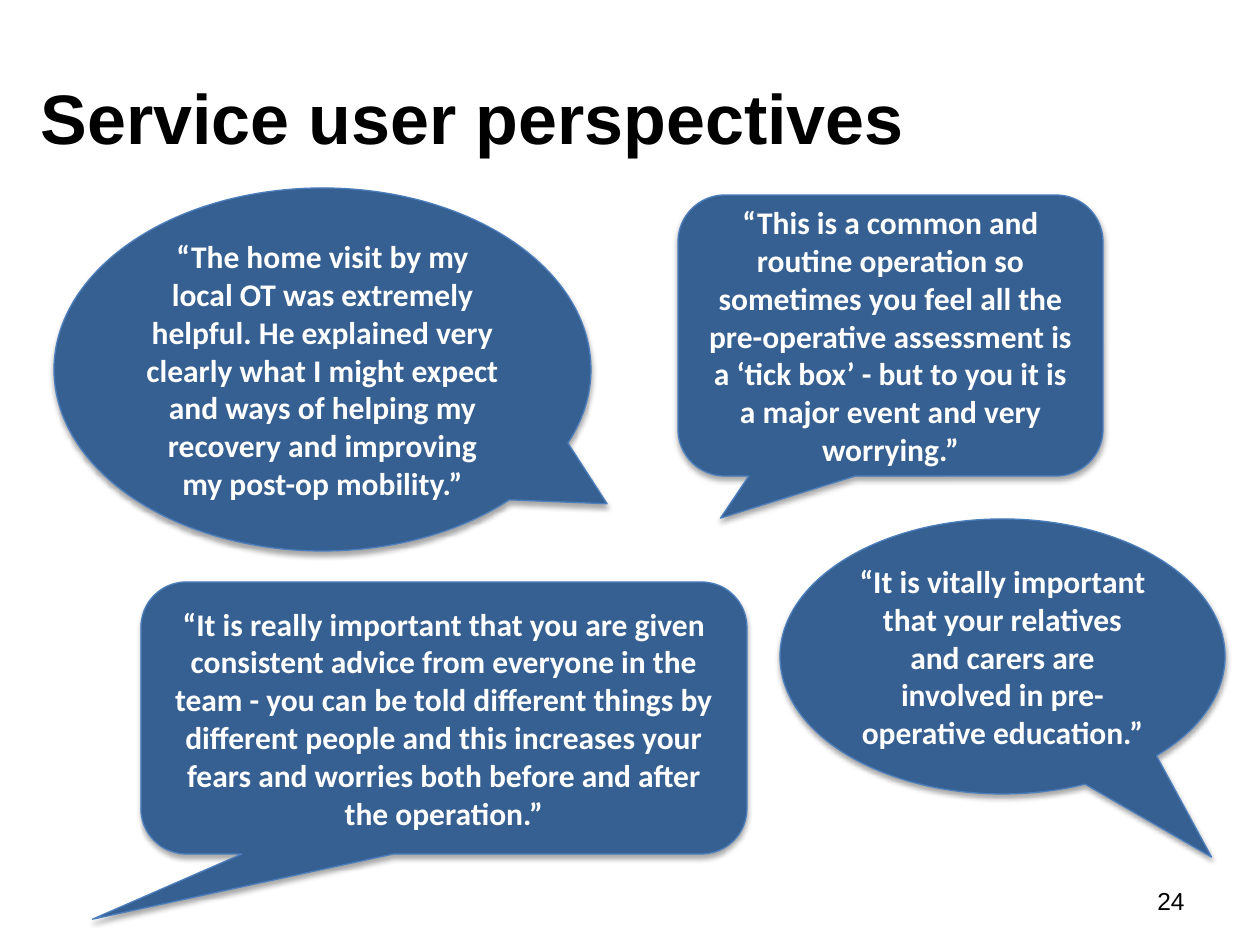
"""Build the slide of service user quotes in speech callouts."""
from lxml import etree
from pptx import Presentation
from pptx.dml.color import RGBColor
from pptx.enum.shapes import MSO_SHAPE
from pptx.enum.text import MSO_ANCHOR, PP_ALIGN
from pptx.oxml.ns import qn
from pptx.util import Emu, Pt

ELLIPSE = MSO_SHAPE.OVAL_CALLOUT
ROUNDED = MSO_SHAPE.ROUNDED_RECTANGULAR_CALLOUT
LEFT, CENTER, RIGHT = PP_ALIGN.LEFT, PP_ALIGN.CENTER, PP_ALIGN.RIGHT
MIDDLE = MSO_ANCHOR.MIDDLE
PX_PER_INCH = 126
TITLE_ONLY = 5

THEME = {
    "text": "000000", "quote": "FFFFFF", "fill": "376092", "line": "4B7EBC",
    "shadow": "000000", "head_font": "Arial", "quote_font": "Calibri",
    "title_size": 40, "quote_size": 18, "number_size": 14, "line_width": 0.75,
}

TITLE = ("Service user perspectives", (28, 38, 1134, 158))
NUMBER = ("24", (903, 876, 294, 50))
QUOTES = [
    (ELLIPSE, (54, 188, 537, 363), (0.53, 0.37),
     "“The home visit by my local OT was extremely helpful. He explained very clearly "
     "what I might expect and ways of helping my recovery and improving my post-op mobility.”"),
    (ELLIPSE, (780, 519, 445, 275), (0.47, 0.73),
     "“It is vitally important that your relatives and carers are involved in "
     "pre-operative education.”"),
    (ROUNDED, (678, 195, 425, 281), (-0.4, 0.65),
     "“This is a common and routine operation so sometimes you feel all the pre-operative "
     "assessment is a ‘tick box’ - but to you it is a major event and very worrying.”"),
    (ROUNDED, (141, 582, 606, 272), (-0.58, 0.74),
     "“It is really important that you are given consistent advice from everyone in the "
     "team - you can be told different things by different people and this increases your "
     "fears and worries both before and after the operation.”"),
]


def px(n):
    return Emu(round(n * 914400 / PX_PER_INCH))


def color(name):
    return RGBColor.from_string(THEME[name])


def write(sp, text, *, size, font="head_font", fill="text", bold=False, align=LEFT):
    tf = sp.text_frame
    tf.word_wrap = True
    tf.vertical_anchor = MIDDLE
    p = tf.paragraphs[0]
    p.alignment = align
    r = p.add_run()
    r.text = text
    r.font.name = THEME[font]
    r.font.size = Pt(THEME[size])
    r.font.bold = bold
    r.font.color.rgb = color(fill)


def add_shadow(sp):
    sp.shadow.inherit = False
    effects = sp._element.spPr.find(qn("a:effectLst"))
    shadow = etree.SubElement(effects, qn("a:outerShdw"), blurRad=str(Pt(3.1)),
                              dist=str(Pt(1.8)), dir="5400000", rotWithShape="0")
    clr = etree.SubElement(shadow, qn("a:srgbClr"), val=THEME["shadow"])
    etree.SubElement(clr, qn("a:alpha"), val="35000")


def add_quote(slide, kind, box, tip, text):
    sp = slide.shapes.add_shape(kind, *map(px, box))
    for i, value in enumerate(tip):
        sp.adjustments[i] = value
    sp.fill.solid()
    sp.fill.fore_color.rgb = color("fill")
    sp.line.color.rgb = color("line")
    sp.line.width = Pt(THEME["line_width"])
    add_shadow(sp)
    write(sp, text, size="quote_size", font="quote_font", fill="quote",
          bold=True, align=CENTER)


def main():
    prs = Presentation()
    prs.slide_width, prs.slide_height = px(1260), px(945)
    slide = prs.slides.add_slide(prs.slide_layouts[TITLE_ONLY])

    text, box = TITLE
    title = slide.shapes.title
    title.left, title.top, title.width, title.height = map(px, box)
    write(title, text, size="title_size", bold=True)

    text, box = NUMBER
    write(slide.shapes.add_textbox(*map(px, box)), text, size="number_size", align=RIGHT)

    for quote in QUOTES:
        add_quote(slide, *quote)
    prs.save("out.pptx")


if __name__ == "__main__":
    main()
